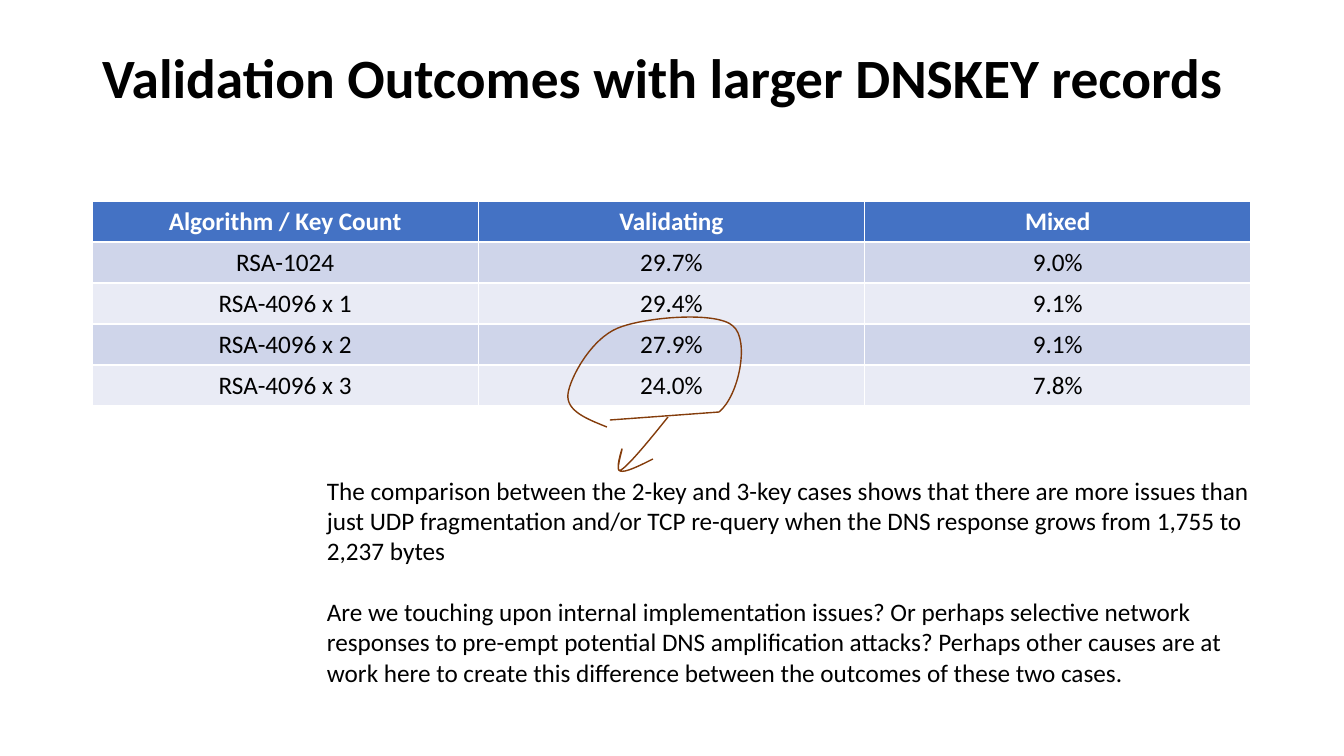
from dataclasses import dataclass
from itertools import chain

from lxml.etree import SubElement
from pptx import Presentation
from pptx.dml.color import RGBColor
from pptx.enum.text import MSO_ANCHOR, MSO_AUTO_SIZE, PP_ALIGN
from pptx.oxml.ns import qn
from pptx.util import Pt

# Content
HEADING = "Validation Outcomes with larger DNSKEY records"
OUTCOMES = [
    ("Algorithm / Key Count", "Validating", "Mixed"),
    ("RSA-1024", "29.7%", "9.0%"),
    ("RSA-4096 x 1", "29.4%", "9.1%"),
    ("RSA-4096 x 2", "27.9%", "9.1%"),
    ("RSA-4096 x 3", "24.0%", "7.8%"),
]
COMMENTARY = [
    "The comparison between the 2-key and 3-key cases shows that there are more issues than "
    "just UDP fragmentation and/or TCP re-query when the DNS response grows from 1,755 to "
    "2,237 bytes",
    "Are we touching upon internal implementation issues? Or perhaps selective network "
    "responses to pre-empt potential DNS amplification attacks? Perhaps other causes are at "
    "work here to create this difference between the outcomes of these two cases.",
]

# Pen strokes in px: a start point, then lines (an end) or curves (two controls, an end)
CIRCLE = ((610, 420), [
    ((719, 412),),
    ((739, 396), (750, 340), (733, 326)),
    ((717, 311), (645, 317), (618, 328)),
    ((591, 339), (570, 378), (568, 394)),
    ((566, 411), (587, 419), (607, 427)),
])
ARROW = ((668, 417), [
    ((648, 442), (629, 465), (621, 470)),
    ((614, 475), (623, 448), (622, 449)),
    ((622, 449), (615, 470), (620, 471)),
    ((625, 473), (639, 466), (653, 459)),
])


@dataclass(frozen=True)
class Theme:
    font: str = "Calibri"
    ink: str = "000000"
    white: str = "FFFFFF"
    header: str = "4472C4"
    bands: tuple = ("CFD5EA", "E9EBF5")
    pen: str = "843C0B"
    title_size: float = 39.6
    body_size: float = 18


THEME = Theme()
EMU_PER_PX = 914400 / 100.8
LEFT, CONTENT_WIDTH = 92, 1159
TABLE_TOP, TABLE_HEIGHT = 201, 205


def px(length):
    return round(length * EMU_PER_PX)


def write(frame, paragraphs, size=THEME.body_size, color=THEME.ink, bold=False,
          align=PP_ALIGN.LEFT, line_spacing=None, gap=0):
    for index, wording in enumerate(paragraphs):
        paragraph = frame.add_paragraph() if index else frame.paragraphs[0]
        paragraph.alignment = align
        paragraph.line_spacing = line_spacing
        paragraph.space_before = Pt(gap if index else 0)
        run = paragraph.add_run()
        run.text = wording
        run.font.name, run.font.size, run.font.bold = THEME.font, Pt(size), bold
        run.font.color.rgb = RGBColor.from_string(color)


def draw_stroke(slide, start, segments):
    points = [(px(x), px(y)) for x, y in chain.from_iterable(segments)]
    builder = slide.shapes.build_freeform(px(start[0]), px(start[1]))
    builder.add_line_segments(points, close=False)
    stroke = builder.convert_to_shape()

    # Regroup each three-point segment into one cubic curve
    steps = list(stroke._element.iter(qn("a:lnTo")))
    outline = steps[0].getparent()
    remaining = iter(steps)
    for segment in segments:
        group = [next(remaining) for _ in segment]
        kind = "a:cubicBezTo" if len(group) == 3 else "a:lnTo"
        joined = SubElement(outline, qn(kind))
        for step in group:
            joined.append(step[0])
            outline.remove(step)

    stroke.shadow.inherit = False
    stroke.fill.background()
    stroke.line.color.rgb = RGBColor.from_string(THEME.pen)
    stroke.line.width = Pt(1)


def main():
    deck = Presentation()
    deck.slide_width, deck.slide_height = px(1344), px(756)
    slide = deck.slides.add_slide(deck.slide_layouts[5])

    # Title, raised by its bottom inset
    title = slide.shapes.title
    title.left, title.top, title.width, title.height = map(px, (LEFT, 40, CONTENT_WIDTH, 146))
    title.text_frame.auto_size = MSO_AUTO_SIZE.NONE
    title.text_frame.vertical_anchor = MSO_ANCHOR.MIDDLE
    title.text_frame.margin_bottom = px(69)
    write(title.text_frame, [HEADING], size=THEME.title_size, bold=True, line_spacing=0.9)

    # Outcome table; its white rules come from the default table style
    rows, columns = len(OUTCOMES), len(OUTCOMES[0])
    table = slide.shapes.add_table(rows, columns, px(LEFT), px(TABLE_TOP),
                                   px(CONTENT_WIDTH), px(TABLE_HEIGHT)).table
    for r, outcome in enumerate(OUTCOMES):
        is_header = r == 0
        fill = THEME.header if is_header else THEME.bands[(r - 1) % 2]
        for c, value in enumerate(outcome):
            cell = table.cell(r, c)
            cell.fill.solid()
            cell.fill.fore_color.rgb = RGBColor.from_string(fill)
            write(cell.text_frame, [value], bold=is_header, align=PP_ALIGN.CENTER,
                  color=THEME.white if is_header else THEME.ink)

    # Commentary
    commentary = slide.shapes.add_textbox(*map(px, (317, 470, 945, 224)))
    commentary.text_frame.word_wrap = True
    write(commentary.text_frame, COMMENTARY, gap=22)

    # Pen marks around the two lowest results
    for start, segments in (CIRCLE, ARROW):
        draw_stroke(slide, start, segments)

    deck.save("out.pptx")


if __name__ == "__main__":
    main()
